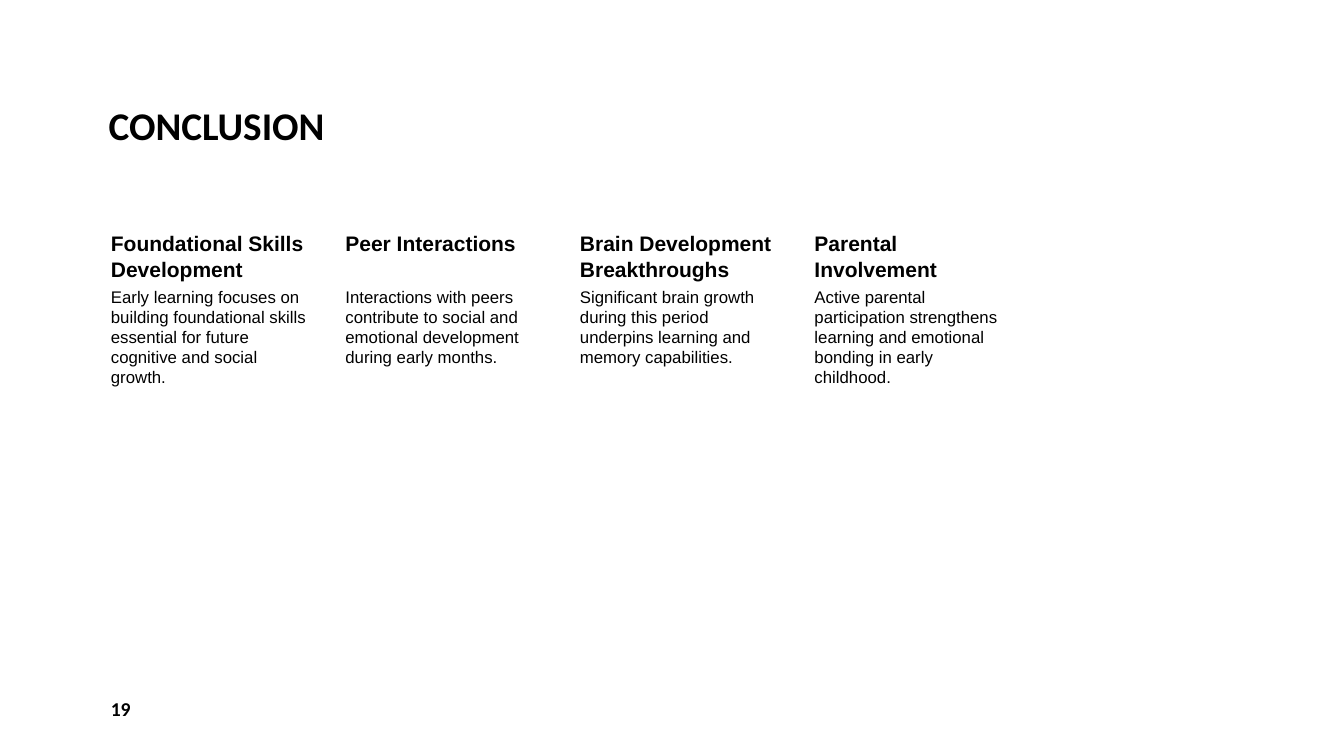
"""Build the conclusion slide with four takeaway columns."""
from pptx import Presentation
from pptx.dml.color import RGBColor
from pptx.enum.text import MSO_ANCHOR
from pptx.util import Inches, Pt

TITLE = "CONCLUSION"
PAGE_NUMBER = "19"
TAKEAWAYS = [
    ("Foundational Skills Development",
     "Early learning focuses on building foundational skills essential for future "
     "cognitive and social growth."),
    ("Peer Interactions",
     "Interactions with peers contribute to social and emotional development "
     "during early months."),
    ("Brain Development Breakthroughs",
     "Significant brain growth during this period underpins learning and memory "
     "capabilities."),
    ("Parental Involvement",
     "Active parental participation strengthens learning and emotional bonding "
     "in early childhood."),
]

SLIDE_WIDTH, SLIDE_HEIGHT = 13.33, 7.5
GRID_LEFT, GRID_TOP = 0.95, 2.27
COLUMN_WIDTH, COLUMN_STEP = 2.12, 2.326
HEADING_HEIGHT, DETAIL_HEIGHT = 0.55, 2.97
DEFAULT_INSETS = (0.1, 0.05, 0.1, 0.05)
COLUMN_INSETS = (0.15, 0.02, 0.02, 0.02)
BLACK, WHITE = "000000", "FFFFFF"


def color(value):
    return RGBColor.from_string(value)


def add_text(slide, text, left, top, width, height, size=12, font="Arial", bold=False,
             anchor=MSO_ANCHOR.TOP, insets=DEFAULT_INSETS, line_spacing=1.0, space_after=0):
    box = slide.shapes.add_textbox(Inches(left), Inches(top), Inches(width), Inches(height))
    frame = box.text_frame
    frame.word_wrap = True
    frame.vertical_anchor = anchor
    (frame.margin_left, frame.margin_top,
     frame.margin_right, frame.margin_bottom) = map(Inches, insets)
    paragraph = frame.paragraphs[0]
    paragraph.line_spacing = line_spacing
    paragraph.space_after = Pt(space_after)
    run = paragraph.add_run()
    run.text = text
    run.font.name = font
    run.font.size = Pt(size)
    run.font.bold = bold
    run.font.color.rgb = color(BLACK)


def main():
    presentation = Presentation()
    presentation.slide_width = Inches(SLIDE_WIDTH)
    presentation.slide_height = Inches(SLIDE_HEIGHT)
    slide = presentation.slides.add_slide(presentation.slide_layouts[6])
    slide.background.fill.solid()
    slide.background.fill.fore_color.rgb = color(WHITE)

    add_text(slide, TITLE, 0.98, 0.08, 9.07, 1.45, size=28, font="Calibri", bold=True,
             anchor=MSO_ANCHOR.BOTTOM, line_spacing=0.9)
    add_text(slide, PAGE_NUMBER, 1, 6.83, 2.92, 0.4, size=14, font="Calibri", bold=True,
             anchor=MSO_ANCHOR.MIDDLE, space_after=6)

    for column, (heading, detail) in enumerate(TAKEAWAYS):
        left = GRID_LEFT + column * COLUMN_STEP
        add_text(slide, heading, left, GRID_TOP, COLUMN_WIDTH, HEADING_HEIGHT,
                 size=15, bold=True, insets=COLUMN_INSETS)
        add_text(slide, detail, left, GRID_TOP + HEADING_HEIGHT, COLUMN_WIDTH, DETAIL_HEIGHT,
                 insets=COLUMN_INSETS)

    presentation.save("out.pptx")


if __name__ == "__main__":
    main()
